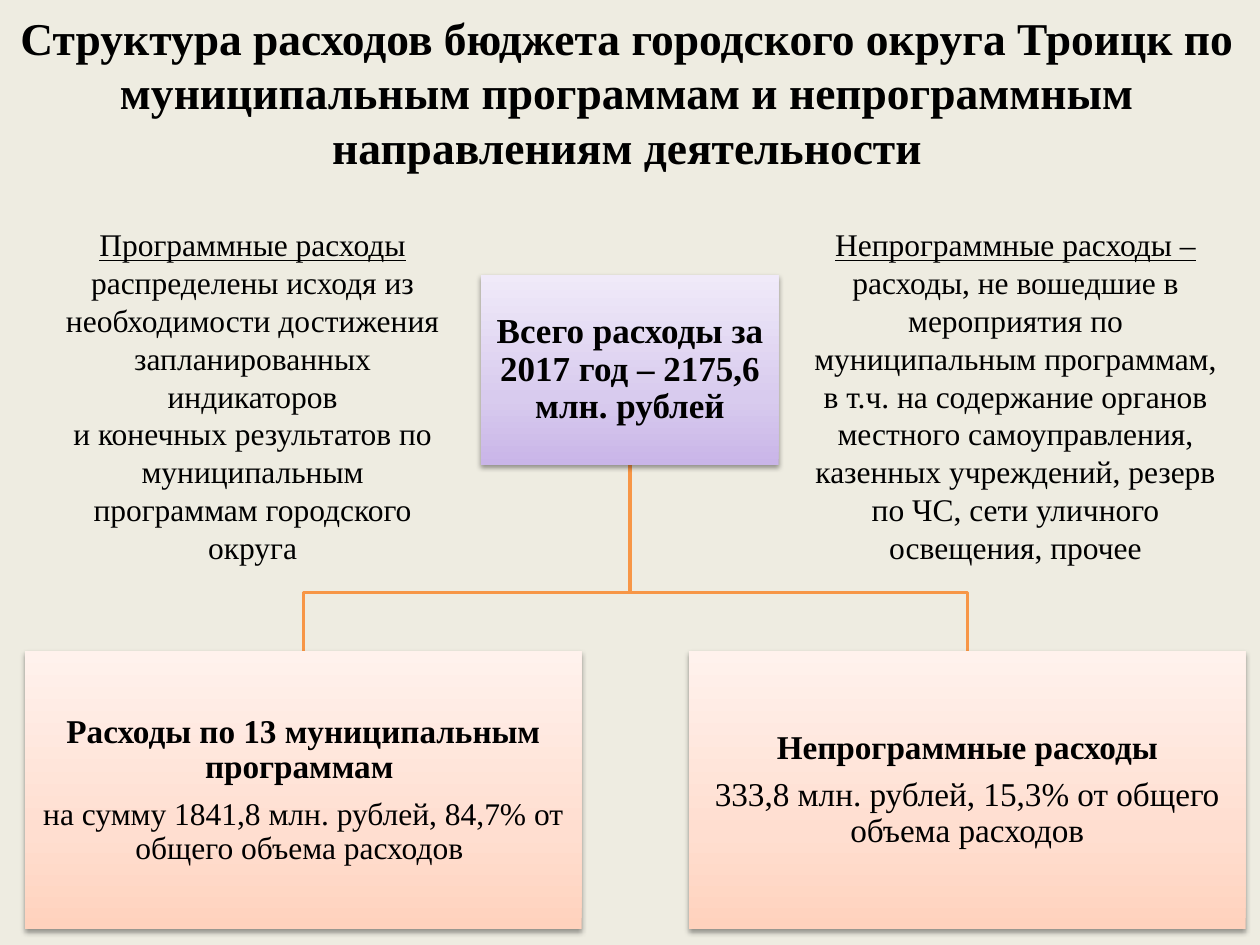
from copy import deepcopy
from dataclasses import dataclass

from lxml import etree
from pptx import Presentation
from pptx.dml.color import RGBColor
from pptx.enum import shapes, text
from pptx.oxml import ns
from pptx.util import Pt


@dataclass(frozen=True)
class Theme:
    """Colours and type sizes of the slide."""
    font: str = "Times New Roman"
    ink: str = "000000"
    paper: str = "EEECE1"
    line: str = "F79646"
    violet: tuple = ("C9B5E8", "D8CBEE", "F0EAF9")
    peach: tuple = ("FFD2BD", "FFDED0", "FFF2ED")
    stops: tuple = (0, 0.35, 1)
    title: int = 26
    total: int = 20
    head: int = 19
    body: int = 18
    line_width: int = 2
    spacing: float = 0.9
    gap: float = 0.35


THEME = Theme()


def rgb(value):
    """Turn a hex string into a colour."""
    return RGBColor.from_string(value)


def style(p, size, bold=False):
    """Centre a paragraph and set its font."""
    p.alignment = text.PP_ALIGN.CENTER
    p.font.name = THEME.font
    p.font.size = Pt(size)
    p.font.bold = bold
    p.font.color.rgb = rgb(THEME.ink)


def add_text(slide, box, paragraphs, size, bold=False, anchor=text.MSO_ANCHOR.TOP):
    """Add a text box whose paragraphs are lists of (words, underlined) runs."""
    tf = slide.shapes.add_textbox(*map(Pt, box)).text_frame
    tf.word_wrap = True
    tf.vertical_anchor = anchor
    for i, runs in enumerate(paragraphs):
        p = tf.add_paragraph() if i else tf.paragraphs[0]
        style(p, size, bold)
        for words, underlined in runs:
            r = p.add_run()
            r.text = words
            r.font.underline = underlined


def fill_gradient(s, colors):
    """Fill a shape with a three-stop gradient rising from the bottom."""
    s.fill.gradient()
    s.fill.gradient_angle = 90
    stops = s._element.spPr.find(ns.qn("a:gradFill")).find(ns.qn("a:gsLst"))
    stops.append(deepcopy(stops[0]))
    for stop, color, position in zip(s.fill.gradient_stops, colors, THEME.stops):
        stop.color.rgb = rgb(color)
        stop.position = position


def add_shadow(s):
    """Give a shape a soft shadow straight below it."""
    s.shadow.inherit = False
    effects = s._element.spPr.find(ns.qn("a:effectLst"))
    shadow = etree.SubElement(effects, ns.qn("a:outerShdw"), blurRad=str(Pt(3.1)),
                              dist=str(Pt(1.6)), dir="5400000", rotWithShape="0")
    color = etree.SubElement(shadow, ns.qn("a:srgbClr"), val=THEME.ink)
    etree.SubElement(color, ns.qn("a:alpha"), val="38000")


def add_card(slide, box, colors, lines):
    """Add a shaded card whose lines are (words, size, bold)."""
    s = slide.shapes.add_shape(shapes.MSO_SHAPE.RECTANGLE, *map(Pt, box))
    fill_gradient(s, colors)
    s.line.fill.background()
    add_shadow(s)
    tf = s.text_frame
    tf.word_wrap = True
    tf.vertical_anchor = text.MSO_ANCHOR.MIDDLE
    tf.margin_left = tf.margin_right = tf.margin_top = tf.margin_bottom = Pt(1)
    for i, (words, size, bold) in enumerate(lines):
        p = tf.add_paragraph() if i else tf.paragraphs[0]
        p.text = words
        style(p, size, bold)
        p.line_spacing = THEME.spacing
        p.space_after = Pt(THEME.gap * size)


def add_branch(slide, parent, child, bend):
    """Join the bottom of one box to the top of another with a bent line."""
    x1, y1 = parent[0] + parent[2] / 2, parent[1] + parent[3]
    x2, y2 = child[0] + child[2] / 2, child[1]
    builder = slide.shapes.build_freeform(Pt(x1), Pt(y1))
    builder.add_line_segments(
        [(Pt(x), Pt(y)) for x, y in ((x1, bend), (x2, bend), (x2, y2))], close=False)
    s = builder.convert_to_shape()
    s.fill.background()
    s.line.color.rgb = rgb(THEME.line)
    s.line.width = Pt(THEME.line_width)
    s.shadow.inherit = False


def main():
    """Build the slide and save it."""
    prs = Presentation()
    prs.slide_width, prs.slide_height = Pt(720), Pt(540)
    slide = prs.slides.add_slide(prs.slide_layouts[6])
    slide.background.fill.solid()
    slide.background.fill.fore_color.rgb = rgb(THEME.paper)

    add_text(slide, (-3, 1.5, 723, 101.5), [[(
        "Структура расходов бюджета городского округа Троицк по муниципальным "
        "программам и непрограммным направлениям деятельности", False)]],
        THEME.title, bold=True, anchor=text.MSO_ANCHOR.MIDDLE)

    total = (275, 157, 170, 108.5)
    programme, other = [(x, 372, 318, 159) for x in (14.4, 393.8)]
    for child in (other, programme):
        add_branch(slide, total, child, 338.5)
    add_card(slide, total, THEME.violet, [
        ("Всего расходы за 2017 год – 2175,6 млн. рублей", THEME.total, True)])
    add_card(slide, programme, THEME.peach, [
        ("Расходы по 13 муниципальным программам ", THEME.head, True),
        ("на сумму 1841,8 млн. рублей, 84,7% от общего объема расходов ",
         THEME.body, False)])
    add_card(slide, other, THEME.peach, [
        ("Непрограммные расходы", THEME.head, True),
        ("333,8 млн. рублей, 15,3% от общего объема расходов", THEME.head, False)])

    add_text(slide, (25.2, 125.3, 238.3, 203.8), [
        [("Программные расходы", True)],
        [(" распределены исходя из ", False)],
        [("необходимости достижения", False)],
        [("запланированных индикаторов", False)],
        [("и конечных результатов по муниципальным программам городского округа",
          False)]], THEME.body)
    add_text(slide, (455.8, 125.3, 249.1, 203.8), [[
        ("Непрограммные расходы – ", True),
        ("расходы, не вошедшие в мероприятия по муниципальным программам, "
         "в т.ч. на содержание органов местного самоуправления, казенных "
         "учреждений, резерв по ЧС, сети уличного освещения, прочее", False)]],
        THEME.body)
    prs.save("out.pptx")


if __name__ == "__main__":
    main()
